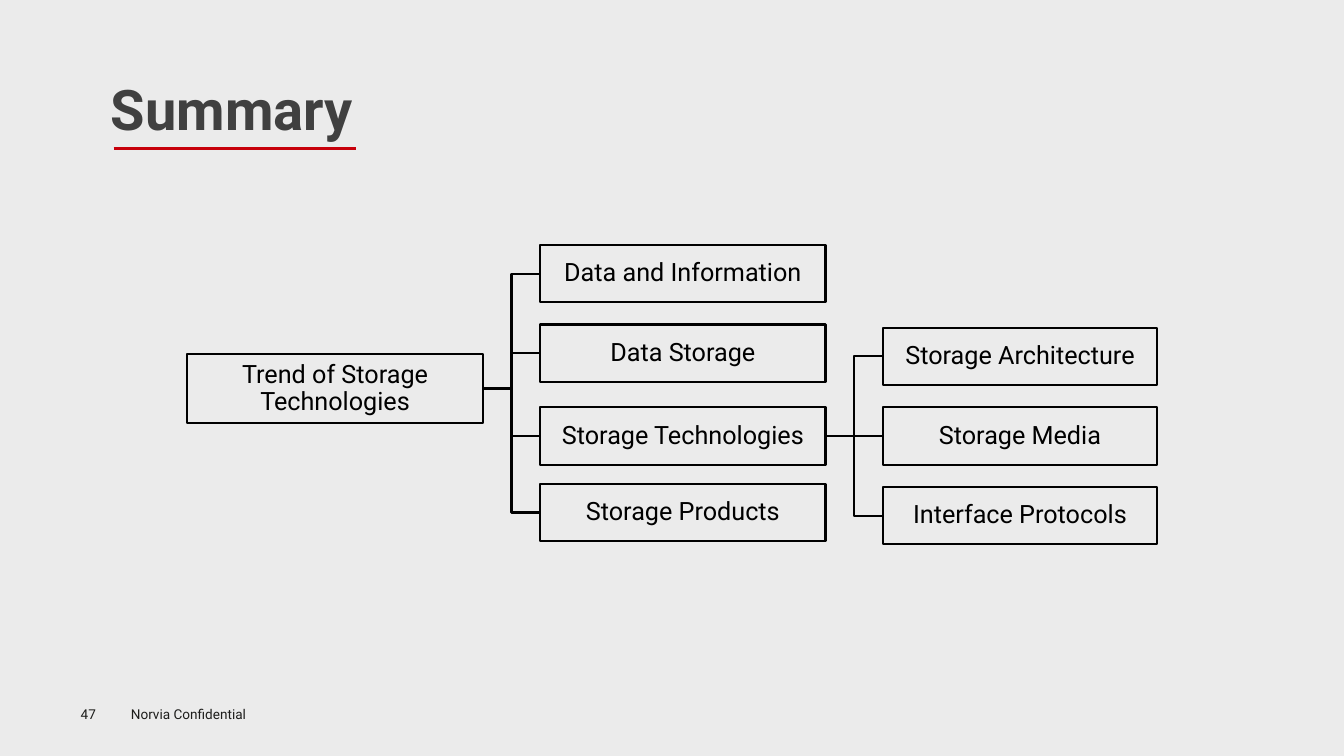
import pptx
import pptx.util
import pptx.dml.color
import pptx.enum.shapes
import pptx.enum.text
import pptx.oxml
import pptx.oxml.ns

Pt = pptx.util.Pt
RGB = pptx.dml.color.RGBColor
ALIGN = pptx.enum.text.PP_ALIGN
ANCHOR = pptx.enum.text.MSO_ANCHOR
KIND = pptx.enum.shapes.MSO_CONNECTOR
RECT = pptx.enum.shapes.MSO_SHAPE.RECTANGLE

HEX = {"back": "EBEBEB", "title": "404040", "rule": "C7000B",
       "foot": "1D1D1B", "ink": "000000"}

TITLE = "Summary"
ROOT = "Trend of Storage Technologies"
TOPICS = [("Data and Information", 175), ("Data Storage", 231.8),
          ("Storage Technologies", 290.9), ("Storage Products", 345.6)]
PARTS = ["Storage Architecture", "Storage Media", "Interface Protocols"]
PARENT = 2  # the topic that splits into parts
FOOT = [("47", (57.6, 504, 39.6, 11.5), 0),
        ("Norvia Confidential", (86.4, 500.4, 130, 19.4), 1)]

ROOT_AT = (133.9, 252.7, 211, 49.7)
BOX_H = 41
TOPIC_X, TOPIC_W = 385.9, 203.8
PART_X, PART_W = 630.7, 195.8
PART_STEP = 56.9

FONTS = {
    "title": {"name": "Roboto", "size": Pt(40), "bold": True},
    "foot": {"name": "Roboto", "size": Pt(9.7)},
    "ink": {"name": "Roboto", "size": Pt(18)},
}


def write(frame, text, style, pad, **form):
    """Put one styled paragraph in a frame; pad is (sides, top and bottom)."""
    for side, gap in zip(("left", "right", "top", "bottom"),
                         (pad[0], pad[0], pad[1], pad[1])):
        setattr(frame, "margin_" + side, Pt(gap))
    para = frame.paragraphs[0]
    para.text = text
    for key, val in form.items():
        setattr(para, key, val)
    font = para.runs[0].font
    for key, val in FONTS[style].items():
        setattr(font, key, val)
    font.color.rgb = RGB.from_string(HEX[style])


def box(text, at):
    shape = slide.shapes.add_shape(RECT, *map(Pt, at))
    shape.shadow.inherit = False
    shape.fill.background()
    shape.line.color.rgb = RGB.from_string(HEX["ink"])
    shape.line.width = Pt(1.5)
    frame = shape.text_frame
    frame.word_wrap = True
    frame.vertical_anchor = ANCHOR.MIDDLE
    write(frame, text, "ink", (0.7, 0.7), alignment=ALIGN.CENTER,
          line_spacing=0.9)
    return shape


def line(kind, ends, color, width):
    link = slide.shapes.add_connector(kind, *map(Pt, ends))
    link.line.color.rgb = RGB.from_string(HEX[color])
    link.line.width = Pt(width)
    props = link._element.spPr
    props.append(pptx.oxml.parse_xml(
        "<a:effectLst %s/>" % pptx.oxml.ns.nsdecls("a")))
    return link


def join(left, right):
    """Link the right side of one box to the left side of another."""
    level = left.top + left.height // 2 == right.top + right.height // 2
    link = line(KIND.STRAIGHT if level else KIND.ELBOW, (0, 0, 0, 0),
                "ink", 1.5)
    link.begin_connect(left, 3)
    link.end_connect(right, 1)


deck = pptx.Presentation()
deck.slide_width, deck.slide_height = Pt(960), Pt(540)
slide = deck.slides.add_slide(deck.slide_layouts[5])
slide.background.fill.solid()
slide.background.fill.fore_color.rgb = RGB.from_string(HEX["back"])

title = slide.shapes.title
for key, val in zip(("left", "top", "width", "height"),
                    (72, 49.7, 190, 55.4)):
    setattr(title, key, Pt(val))
frame = title.text_frame
frame.word_wrap = False
frame.auto_size = pptx.enum.text.MSO_AUTO_SIZE.NONE
frame.vertical_anchor = ANCHOR.MIDDLE
write(frame, TITLE, "title", (7.2, 3.6), alignment=ALIGN.LEFT)
line(KIND.STRAIGHT, (81.1, 106.3, 254.3, 106.3), "rule", 2.25)

root = box(ROOT, ROOT_AT)
topics = [box(text, (TOPIC_X, top, TOPIC_W, BOX_H)) for text, top in TOPICS]
mid = TOPICS[PARENT][1]
parts = [box(text, (PART_X, mid + (i - 1) * PART_STEP, PART_W, BOX_H))
         for i, text in enumerate(PARTS)]

for topic in topics:
    join(root, topic)
for part in parts:
    join(topics[PARENT], part)

for text, at, pad in FOOT:
    note = slide.shapes.add_textbox(*map(Pt, at)).text_frame
    note.word_wrap = True
    write(note, text, "foot", (7.2 * pad, 3.6 * pad))

deck.save("out.pptx")
